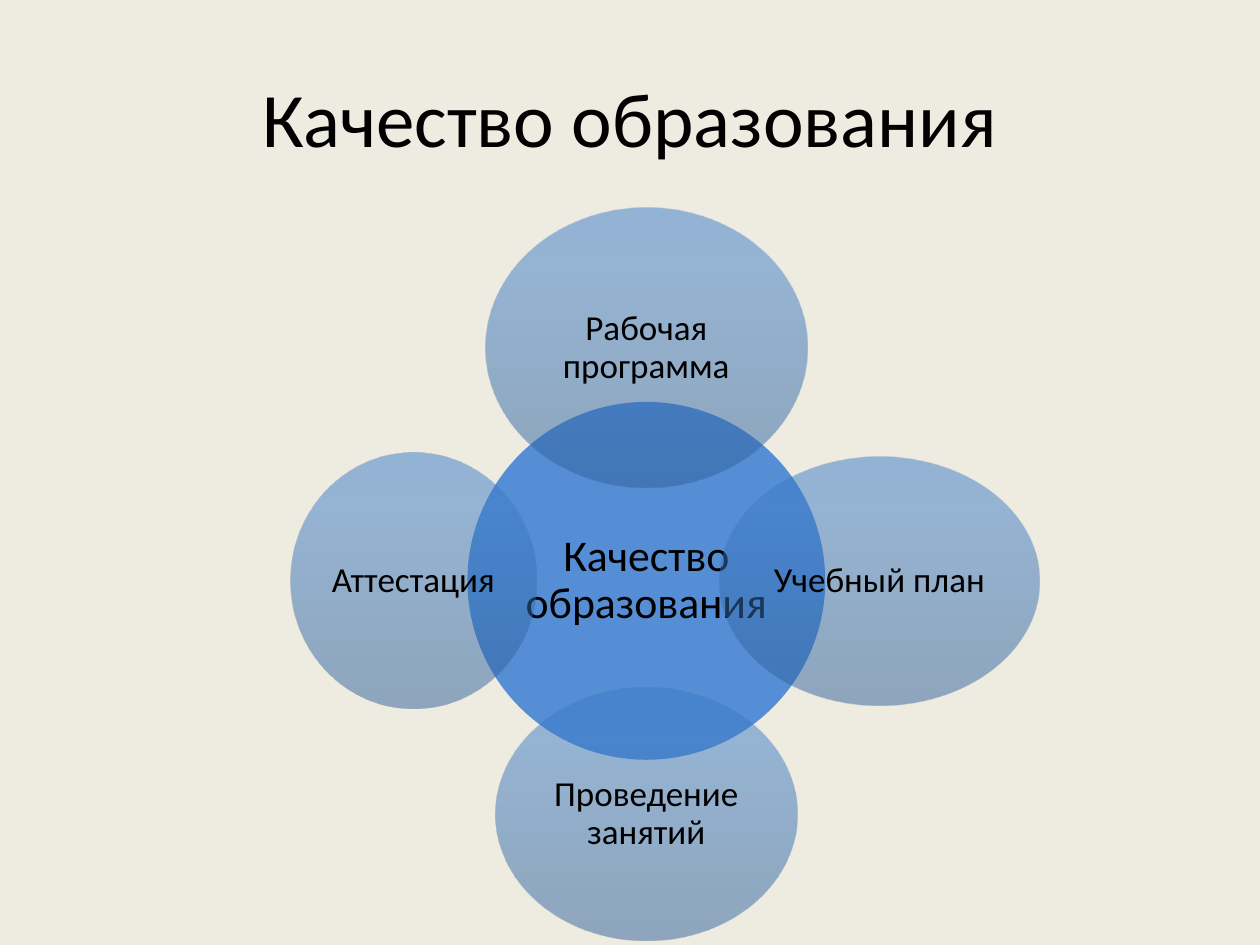
from lxml import etree
from pptx import Presentation
from pptx.dml.color import RGBColor
from pptx.enum.shapes import MSO_SHAPE
from pptx.enum.text import MSO_ANCHOR, PP_ALIGN
from pptx.oxml.ns import qn
from pptx.util import Inches, Pt

OVAL = MSO_SHAPE.OVAL
MIDDLE = MSO_ANCHOR.MIDDLE
CENTER = PP_ALIGN.CENTER

BACKGROUND = RGBColor(0xEE, 0xEC, 0xE1)
BLACK = RGBColor(0x00, 0x00, 0x00)
HUB_BLUE = RGBColor(0x55, 0x8E, 0xD5)
GRADIENT = [
    (0, RGBColor(0x2F, 0x5F, 0x99)),
    (80, RGBColor(0x3D, 0x7C, 0xC7)),
    (100, RGBColor(0x3A, 0x7C, 0xCB)),
]
GRADIENT_ANGLE = 270
OPACITY = 50

TITLE = "Качество образования"
HUB_X, HUB_Y, HUB_SIZE = 5.13, 4.61, 2.84
ORBIT = 1.85
SATELLITES = [
    ("Рабочая программа", (0, -1), (2.55, 2.22)),
    ("Учебный план", (1, 0), (2.54, 1.97)),
    ("Проведение занятий", (0, 1), (2.4, 2.01)),
    ("Аттестация", (-1, 0), (1.95, 2.03)),
]


def write_text(shape, text, size, margin=None, line_spacing=None):
    frame = shape.text_frame
    frame.word_wrap = True
    frame.vertical_anchor = MIDDLE
    if margin is not None:
        frame.margin_left = frame.margin_right = Inches(margin)
        frame.margin_top = frame.margin_bottom = Inches(margin)
    paragraph = frame.paragraphs[0]
    paragraph.alignment = CENTER
    paragraph.line_spacing = line_spacing
    run = paragraph.add_run()
    run.text = text
    run.font.name = "Calibri"
    run.font.size = Pt(size)
    run.font.color.rgb = BLACK


def fill_gradient(shape):
    shape.fill.gradient()
    gradient = shape.fill._xPr.find(qn("a:gradFill"))
    for child in list(gradient):
        gradient.remove(child)
    stops = etree.SubElement(gradient, qn("a:gsLst"))
    for position, color in GRADIENT:
        stop = etree.SubElement(stops, qn("a:gs"), pos=str(position * 1000))
        tone = etree.SubElement(stop, qn("a:srgbClr"), val=str(color))
        etree.SubElement(tone, qn("a:alpha"), val=str(OPACITY * 1000))
    etree.SubElement(gradient, qn("a:lin"), ang=str(GRADIENT_ANGLE * 60000), scaled="0")


def add_ellipse(slide, text, center_x, center_y, width, height, size):
    shape = slide.shapes.add_shape(
        OVAL,
        Inches(center_x - width / 2),
        Inches(center_y - height / 2),
        Inches(width),
        Inches(height),
    )
    shape.shadow.inherit = False
    shape.line.fill.background()
    write_text(shape, text, size, margin=0.03, line_spacing=0.9)
    return shape


def main():
    presentation = Presentation()
    presentation.slide_width = Inches(10)
    presentation.slide_height = Inches(7.5)
    slide = presentation.slides.add_slide(presentation.slide_layouts[6])
    slide.background.fill.solid()
    slide.background.fill.fore_color.rgb = BACKGROUND

    title = slide.shapes.add_textbox(Inches(0.5), Inches(0.3), Inches(9), Inches(1.25))
    write_text(title, TITLE, 44)

    hub = add_ellipse(slide, TITLE, HUB_X, HUB_Y, HUB_SIZE, HUB_SIZE, 25)
    hub.fill.solid()
    hub.fill.fore_color.rgb = HUB_BLUE

    for text, (step_x, step_y), (width, height) in SATELLITES:
        satellite = add_ellipse(
            slide, text, HUB_X + step_x * ORBIT, HUB_Y + step_y * ORBIT, width, height, 20
        )
        fill_gradient(satellite)

    presentation.save("out.pptx")


if __name__ == "__main__":
    main()
